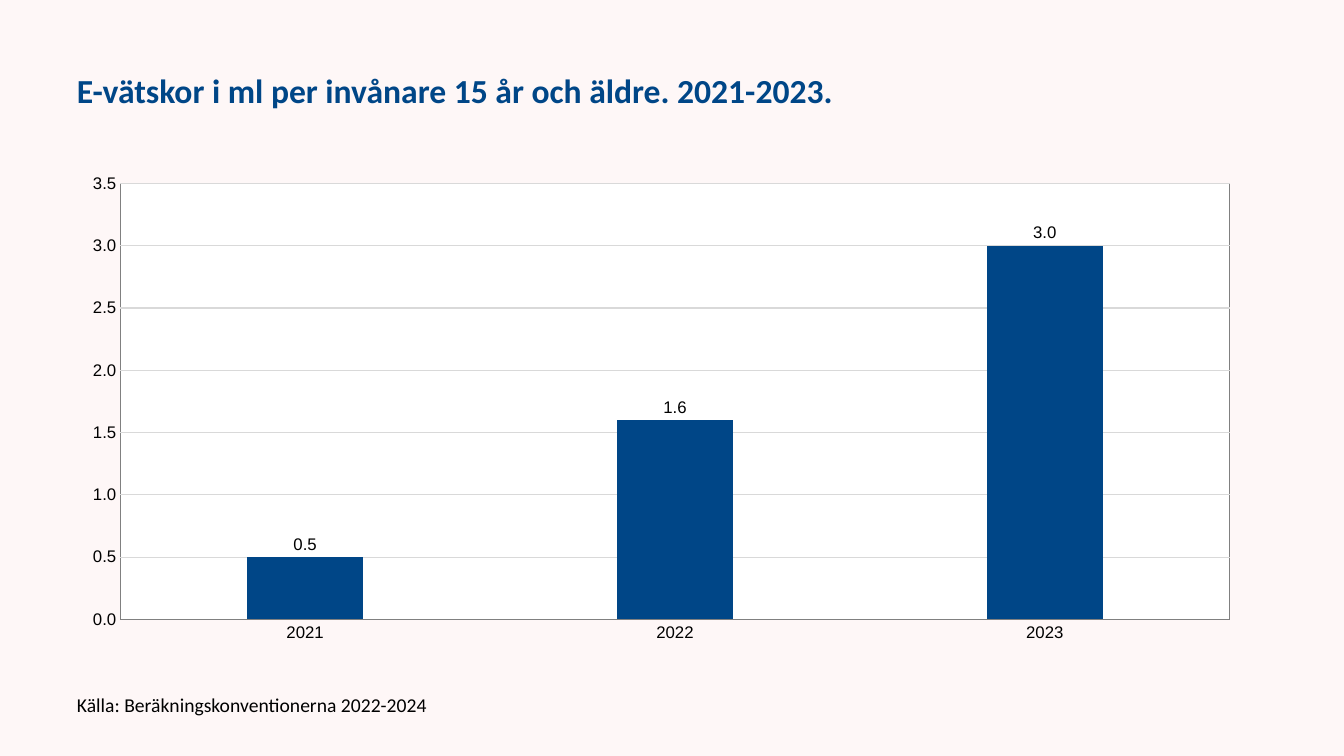
"""Build a slide with a column chart of e-liquid volume per inhabitant."""
from lxml import etree
from pptx import Presentation
from pptx.chart.data import CategoryChartData
from pptx.dml.color import RGBColor
from pptx.enum.chart import XL_CHART_TYPE as ChartType
from pptx.enum.chart import XL_LABEL_POSITION as LabelPosition
from pptx.enum.chart import XL_TICK_MARK as TickMark
from pptx.enum.text import MSO_ANCHOR as Anchor
from pptx.oxml import parse_xml
from pptx.oxml.ns import nsdecls, qn
from pptx.util import Pt

BACKGROUND = RGBColor(0xFE, 0xF7, 0xF7)
BLUE = RGBColor(0x00, 0x46, 0x87)
BLACK = RGBColor(0x00, 0x00, 0x00)
WHITE = RGBColor(0xFF, 0xFF, 0xFF)
AXIS_GRAY = RGBColor(0x80, 0x80, 0x80)
GRID_GRAY = RGBColor(0xD9, 0xD9, 0xD9)

SLIDE_SIZE = (1344, 756)
TEXTS = [
    ("E-vätskor i ml per invånare 15 år och äldre. 2021-2023.",
     (67, 30, 1210, 126), 24, BLUE, True),
    ("Källa: Beräkningskonventionerna 2022-2024",
     (67, 688, 605, 37), 14, BLACK, False),
]
CHART_BOX = (67, 170, 1210, 499)
PLOT_LAYOUT = {"x": 0.044, "y": 0.027, "w": 0.917, "h": 0.874}
YEARS = ["2021", "2022", "2023"]
MILLILITRES = [0.5, 1.6, 3.0]


def px(length):
    """Turn px into EMU."""
    return round(length * 914400 / 100.8)


def style_font(font, name, size, color, bold=False):
    """Set the face, size, colour and weight of a font."""
    font.name = name
    font.size = Pt(size)
    font.color.rgb = color
    font.bold = bold


def style_line(line, color):
    """Give a line its colour and the common thin width."""
    line.color.rgb = color
    line.width = Pt(0.75)


def add_text(slide, text, box, size, color, bold):
    """Add one vertically centred line of text."""
    text_frame = slide.shapes.add_textbox(*map(px, box)).text_frame
    text_frame.word_wrap = True
    text_frame.vertical_anchor = Anchor.MIDDLE
    text_frame.text = text
    paragraph = text_frame.paragraphs[0]
    paragraph.line_spacing = 0.9
    style_font(paragraph.runs[0].font, "Calibri", size, color, bold)


def shape_plot_area(chart):
    """Place the plot area and give it a white fill and gray border."""
    plot_area = chart.element.find(".//" + qn("c:plotArea"))
    for old_layout in plot_area.findall(qn("c:layout")):
        plot_area.remove(old_layout)
    layout = parse_xml(f"<c:layout {nsdecls('c')}><c:manualLayout/></c:layout>")
    settings = {"layoutTarget": "inner", "xMode": "edge", "yMode": "edge", **PLOT_LAYOUT}
    for name, value in settings.items():
        etree.SubElement(layout[0], qn("c:" + name)).set("val", str(value))
    plot_area.insert(0, layout)
    plot_area.append(parse_xml(
        f"<c:spPr {nsdecls('c', 'a')}>"
        f'<a:solidFill><a:srgbClr val="{WHITE}"/></a:solidFill>'
        f'<a:ln w="{Pt(0.75)}"><a:solidFill><a:srgbClr val="{AXIS_GRAY}"/>'
        "</a:solidFill></a:ln></c:spPr>"))


def add_volume_chart(slide):
    """Add the column chart with its axes and labels."""
    data = CategoryChartData(number_format="0.0")
    data.categories = YEARS
    data.add_series("Series 1", MILLILITRES)
    chart = slide.shapes.add_chart(
        ChartType.COLUMN_CLUSTERED, *map(px, CHART_BOX), data).chart
    chart.has_title = False
    chart.has_legend = False
    style_font(chart.font, "Arial", 12, BLACK)

    for axis in (chart.category_axis, chart.value_axis):
        axis.major_tick_mark = axis.minor_tick_mark = TickMark.NONE
        style_font(axis.tick_labels.font, "Arial", 12, BLACK)
    style_line(chart.category_axis.format.line, AXIS_GRAY)
    value_axis = chart.value_axis
    value_axis.format.line.fill.background()
    value_axis.minimum_scale, value_axis.maximum_scale = 0, 3.5
    value_axis.major_unit = 0.5
    value_axis.tick_labels.number_format = "0.0"
    value_axis.tick_labels.number_format_is_linked = False
    style_line(value_axis.major_gridlines.format.line, GRID_GRAY)

    plot = chart.plots[0]
    plot.gap_width, plot.overlap = 219, -27
    plot.vary_by_categories = False
    fill = plot.series[0].format.fill
    fill.solid()
    fill.fore_color.rgb = BLUE
    plot.has_data_labels = True
    labels = plot.data_labels
    labels.show_value = True
    labels.number_format = "0.0"
    labels.number_format_is_linked = False
    labels.position = LabelPosition.OUTSIDE_END
    style_font(labels.font, "Arial", 12, BLACK)
    shape_plot_area(chart)


def main():
    """Assemble and save the presentation."""
    presentation = Presentation()
    presentation.slide_width, presentation.slide_height = map(px, SLIDE_SIZE)
    slide = presentation.slides.add_slide(presentation.slide_layouts[6])
    slide.background.fill.solid()
    slide.background.fill.fore_color.rgb = BACKGROUND
    for entry in TEXTS:
        add_text(slide, *entry)
    add_volume_chart(slide)
    presentation.save("out.pptx")


if __name__ == "__main__":
    main()
